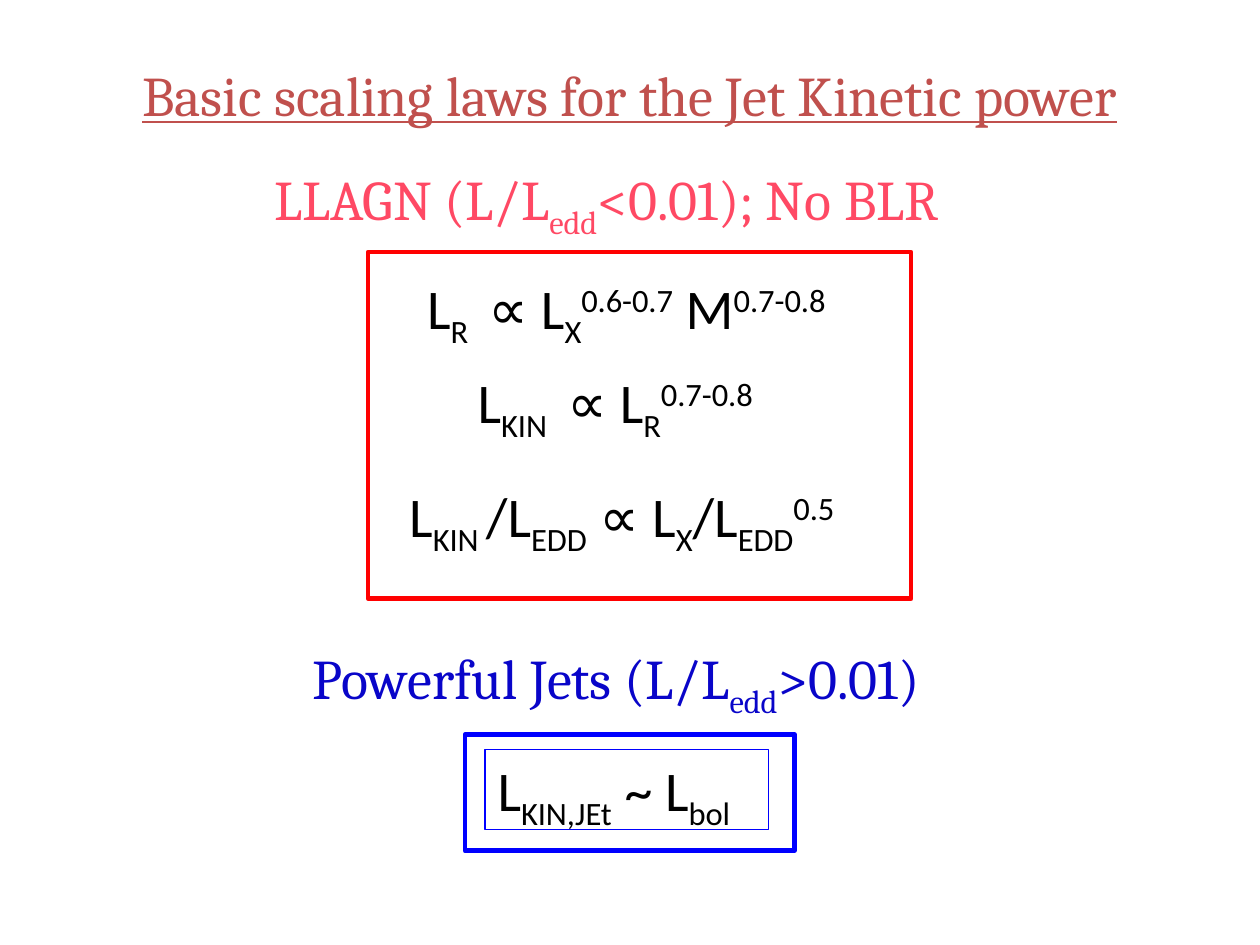
from pptx import Presentation
from pptx.dml.color import RGBColor
from pptx.enum.shapes import MSO_SHAPE as Preset
from pptx.enum.text import MSO_ANCHOR as Anchor, MSO_AUTO_SIZE as AutoSize, PP_ALIGN as Align
from pptx.util import Cm, Pt

COLORS = {"title": "C0504D", "faint": "FF4964", "powerful": "0905C9",
          "formula": "000000", "red": "FF0000", "blue": "0000FF"}
LINE_HEIGHT = 1.62


def color(name):
    return RGBColor.from_string(COLORS[name])


def sub(text):
    return text, -25000


def sup(text):
    return text, 30000


def write(box, spans, font="Calibri", ink="formula", align=Align.LEFT,
          anchor=Anchor.TOP, underline=None, wrap=False):
    """Fill a box with spans: plain strings, or pairs from sub() and sup()."""
    frame = box.text_frame
    frame.word_wrap = wrap
    frame.auto_size = AutoSize.NONE if wrap else AutoSize.SHAPE_TO_FIT_TEXT
    frame.vertical_anchor = anchor
    para = frame.paragraphs[0]
    para.alignment = align
    for item in spans:
        text, baseline = (item, 0) if isinstance(item, str) else item
        span = para.add_run()
        span.text = text
        span.font.name = font
        span.font.size = Pt(32)
        span.font.underline = underline
        span.font.color.rgb = color(ink)
        if baseline:
            span.font._element.set("baseline", str(baseline))


def add_text(shapes, left, top, width, height, spans, **style):
    box = shapes.add_textbox(Cm(left), Cm(top), Cm(width), Cm(height))
    write(box, spans, **style)


def add_frame(shapes, left, top, width, height, ink, weight):
    frame = shapes.add_shape(Preset.RECTANGLE, Cm(left), Cm(top), Cm(width), Cm(height))
    frame.shadow.inherit = False
    frame.fill.background()
    frame.line.color.rgb = color(ink)
    frame.line.width = Pt(weight)
    return frame


def add_faint_laws(page, left, top, width, height):
    laws = [
        (0.94, 0.3, 9.4, ["L", sub("R "), " ∝ L", sub("X"), sup("0.6-0.7"),
                          " M", sup("0.7-0.8")]),
        (1.96, 2.21, 6.78, ["L", sub("KIN "), " ∝ L", sub("R"), sup("0.7-0.8")]),
        (0.58, 4.5, 9.93, ["L", sub("KIN "), "/L", sub("EDD"), " ∝ L", sub("X"),
                           "/L", sub("EDD"), sup("0.5")]),
    ]
    shapes = page.shapes.add_group_shape().shapes
    for dx, dy, law_width, spans in laws:
        add_text(shapes, left + dx, top + dy, law_width, LINE_HEIGHT, spans)
    add_frame(shapes, left, top, width, height, "red", 2.5)


def add_powerful_law(page, left, top, width, height):
    shapes = page.shapes.add_group_shape().shapes
    law = add_frame(shapes, left + 0.41, top + 0.3, 5.72, LINE_HEIGHT, "blue", 0.75)
    write(law, ["L", sub("KIN,JEt"), " ~ L", sub("bol")])
    add_frame(shapes, left, top, width, height, "blue", 2.5)


def main():
    deck = Presentation()
    deck.slide_width, deck.slide_height = Cm(25.4), Cm(19.05)
    page = deck.slides.add_slide(deck.slide_layouts[6])
    add_text(page.shapes, 0.48, 0.84, 24.43, 2.11,
             ["Basic scaling laws for the Jet Kinetic power"], font="Cambria",
             ink="title", align=Align.CENTER, anchor=Anchor.MIDDLE,
             underline=True, wrap=True)
    add_faint_laws(page, 7.42, 5.08, 10.95, 6.99)
    add_text(page.shapes, 5.28, 3.2, 16.23, LINE_HEIGHT,
             ["LLAGN (L/L", sub("edd"), "<0.01); No BLR"], font="Cambria", ink="faint")
    add_powerful_law(page, 9.37, 14.81, 6.65, 2.34)
    add_text(page.shapes, 6.05, 12.85, 14.55, LINE_HEIGHT,
             ["Powerful Jets (L/L", sub("edd"), ">0.01)"], font="Cambria", ink="powerful")
    deck.save("out.pptx")


if __name__ == "__main__":
    main()
